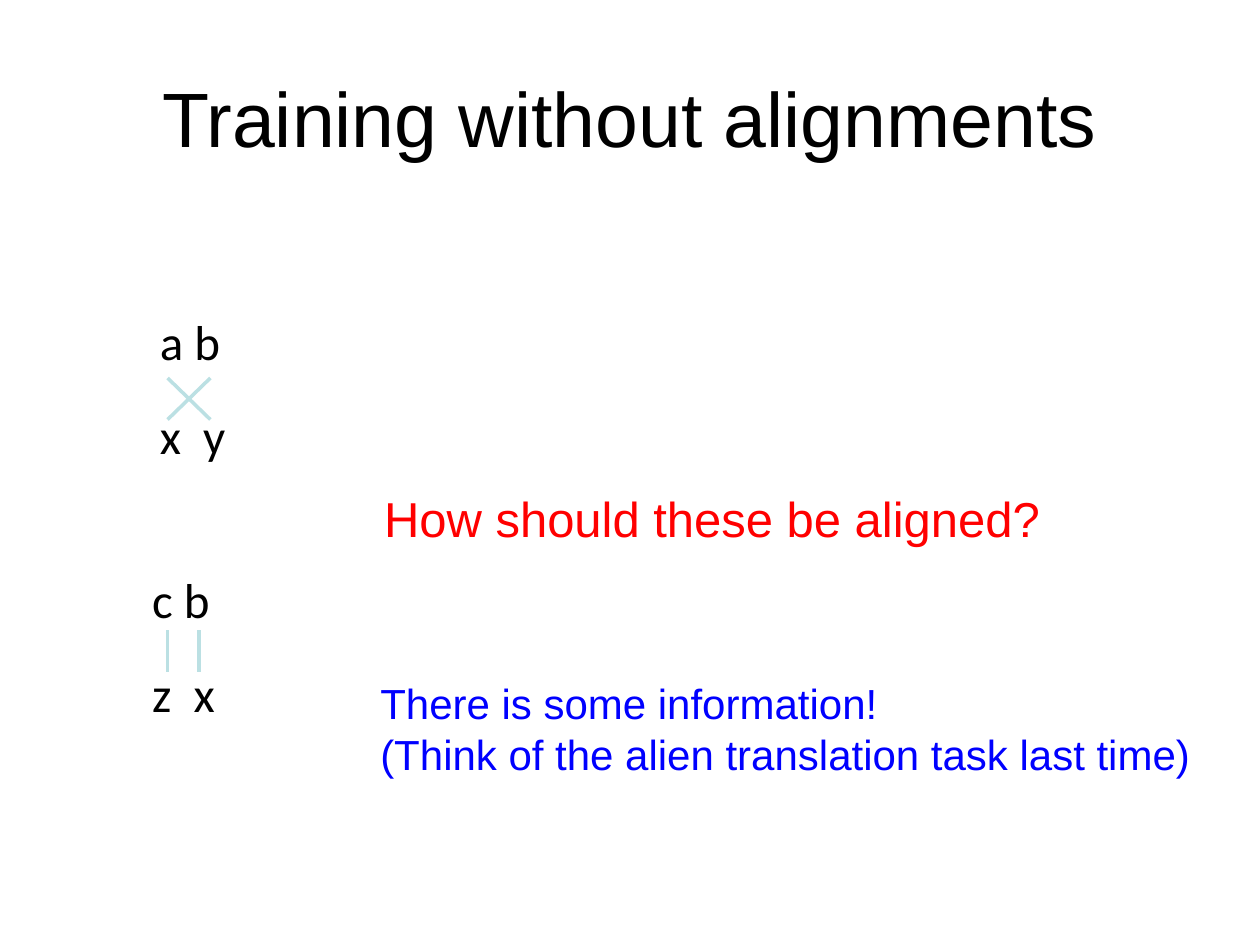
from lxml import etree
from pptx import Presentation
from pptx.dml.color import RGBColor as RGB
from pptx.enum.shapes import MSO_CONNECTOR as Conn
from pptx.enum.text import MSO_ANCHOR as Anchor, MSO_AUTO_SIZE as Auto, PP_ALIGN as Align
from pptx.oxml.ns import qn
from pptx.util import Inches, Pt

COLORS = {"black": "000000", "red": "FF0000", "blue": "0000FF", "link": "BBE0E3"}


def add_text(slide, box, lines, size, color="black", font="Arial",
             align=Align.LEFT, wrap=False, fit=True):
    frame = slide.shapes.add_textbox(*map(Inches, box)).text_frame
    frame.word_wrap = wrap
    frame.auto_size = Auto.SHAPE_TO_FIT_TEXT if fit else Auto.NONE
    frame.vertical_anchor = Anchor.TOP if fit else Anchor.MIDDLE
    for i, line in enumerate(lines):
        para = frame.add_paragraph() if i else frame.paragraphs[0]
        para.alignment = align
        run = para.add_run()
        run.text = line
        run.font.name = font
        run.font.size = Pt(size)
        run.font.color.rgb = RGB.from_string(COLORS[color])


def add_link(slide, x1, y1, x2, y2):
    line = slide.shapes.add_connector(Conn.STRAIGHT, *map(Inches, (x1, y1, x2, y2)))
    line.line.color.rgb = RGB.from_string(COLORS["link"])
    line.line.width = Pt(2)
    etree.SubElement(line._element.spPr, qn("a:effectLst"))


def add_pair(slide, left, top, words, links, link_top):
    """Two word rows, one above the other, with links from top x to bottom x."""
    for i, (text, width) in enumerate(words):
        add_text(slide, (left, top + 0.75 * i, width, 0.57), [text], 28, font="Calibri")
    for x1, x2 in links:
        add_link(slide, x1, link_top, x2, link_top + 0.33)


def main():
    prs = Presentation()
    prs.slide_width, prs.slide_height = Inches(10), Inches(7.5)
    slide = prs.slides.add_slide(prs.slide_layouts[6])

    add_text(slide, (0.5, 0.3, 9, 1.25), ["Training without alignments"], 44,
             align=Align.CENTER, wrap=True, fit=False)
    add_pair(slide, 1.17, 2.42, [("a b", 0.69), ("x  y", 0.73)],
             [(1.67, 1.33), (1.33, 1.67)], 3)
    add_pair(slide, 1.11, 4.47, [("c b", 0.66), ("z  x", 0.71)],
             [(1.58, 1.58), (1.33, 1.33)], 5)
    add_text(slide, (2.92, 3.83, 5.46, 0.57), ["How should these be aligned?"], 28,
             "red", align=Align.CENTER)
    add_text(slide, (2.92, 5.33, 6.67, 0.91),
             ["There is some information!",
              "(Think of the alien translation task last time)"],
             24, "blue", wrap=True)
    prs.save("out.pptx")


if __name__ == "__main__":
    main()
